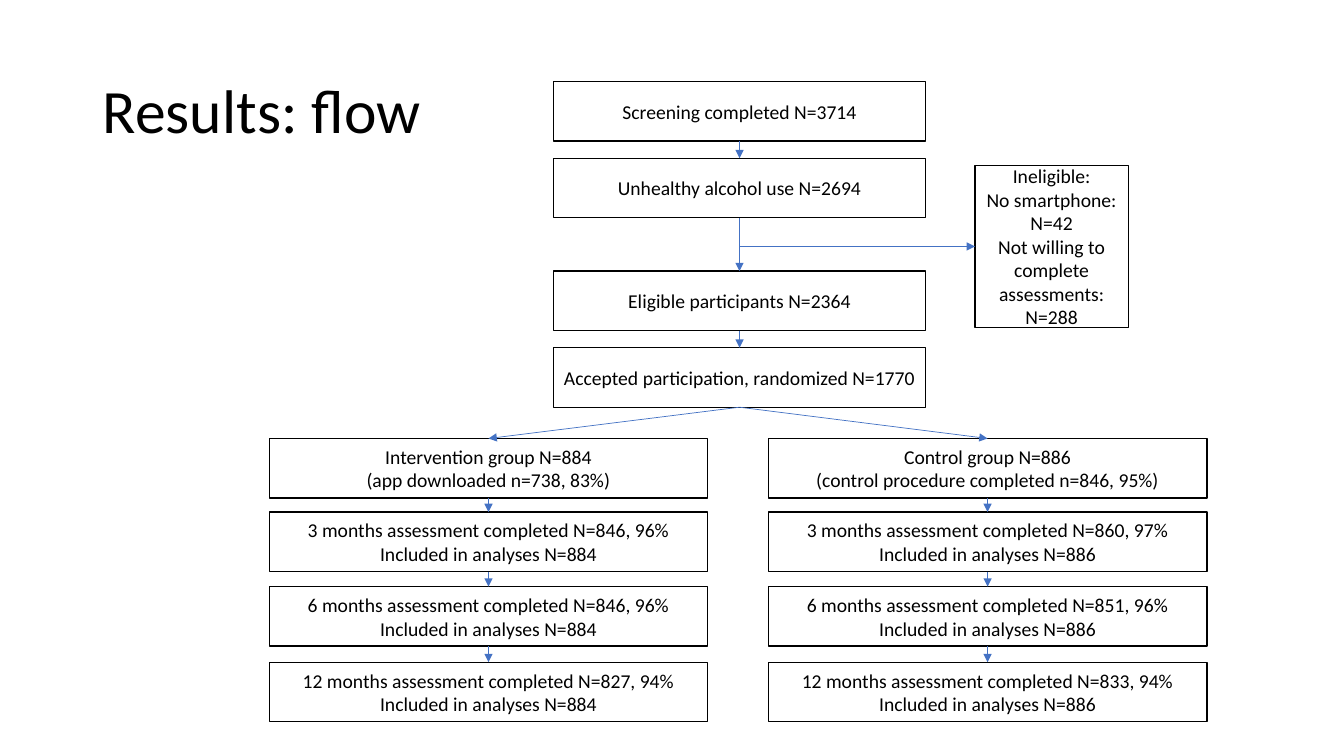
from dataclasses import dataclass
from itertools import pairwise

from lxml.etree import SubElement
from pptx import Presentation
from pptx.dml.color import RGBColor
from pptx.enum.shapes import MSO_CONNECTOR, MSO_SHAPE
from pptx.enum.text import MSO_ANCHOR, MSO_AUTO_SIZE, PP_ALIGN
from pptx.oxml.ns import qn
from pptx.shapes.autoshape import Shape
from pptx.shapes.connector import Connector
from pptx.slide import Slide
from pptx.util import Emu, Pt

EMU_PER_PX = 9144  # 100 px to the inch
FONT = "Calibri"
BLACK = "000000"
ARROW_BLUE = "4472C4"
TOP, LEFT, BOTTOM = 0, 1, 2
STEP_HEIGHT = 59


@dataclass(frozen=True)
class Step:
    top: int
    lines: tuple[str, ...]


@dataclass(frozen=True)
class Column:
    left: int
    width: int
    steps: tuple[Step, ...]


def group_column(left: int, group: str, note: str, included: int,
                 completed: tuple[str, str, str]) -> Column:
    """Describe one trial arm: its group box and three follow-up assessments."""
    follow_ups = tuple(
        Step(top, (f"{months} months assessment completed {count}",
                   f"Included in analyses N={included}"))
        for top, months, count in zip((508, 582, 657), (3, 6, 12), completed)
    )
    return Column(left, 435, (Step(435, (group, note)), *follow_ups))


SCREENING = Column(549, 369, (
    Step(81, ("Screening completed N=3714",)),
    Step(157, ("Unhealthy alcohol use N=2694",)),
    Step(269, ("Eligible participants N=2364",)),
    Step(345, ("Accepted participation, randomized N=1770",)),
))
GROUPS = (
    group_column(267, "Intervention group N=884", "(app downloaded n=738, 83%)",
                 884, ("N=846, 96%", "N=846, 96%", "N=827, 94%")),
    group_column(762, "Control group N=886",
                 "(control procedure completed n=846, 95%)",
                 886, ("N=860, 97%", "N=851, 96%", "N=833, 94%")),
)
INELIGIBLE = ("Ineligible:", "No smartphone: N=42",
              "Not willing to complete assessments: N=288")


def px(length: int) -> Emu:
    return Emu(length * EMU_PER_PX)


def color(hex_code: str) -> RGBColor:
    return RGBColor.from_string(hex_code)


def add_title(page: Slide, text: str) -> None:
    title = page.shapes.title
    title.left, title.top, title.width, title.height = map(px, (92, 40, 1150, 145))
    frame = title.text_frame
    frame.text = text
    frame.auto_size = MSO_AUTO_SIZE.NONE
    frame.vertical_anchor = MSO_ANCHOR.MIDDLE
    para = frame.paragraphs[0]
    para.alignment = PP_ALIGN.LEFT
    para.line_spacing = 0.9
    para.font.name = FONT
    para.font.size = Pt(44)
    para.font.color.rgb = color(BLACK)


def add_box(page: Slide, left: int, top: int, width: int, height: int,
            lines: tuple[str, ...]) -> Shape:
    box = page.shapes.add_shape(MSO_SHAPE.RECTANGLE, px(left), px(top),
                                px(width), px(height))
    box.shadow.inherit = False
    box.fill.background()
    box.line.color.rgb = color(BLACK)
    box.line.width = Pt(1)
    frame = box.text_frame
    frame.word_wrap = True
    frame.vertical_anchor = MSO_ANCHOR.MIDDLE
    frame.text = "\n".join(lines)
    for para in frame.paragraphs:
        para.alignment = PP_ALIGN.CENTER
        para.font.name = FONT
        para.font.size = Pt(14)
        para.font.color.rgb = color(BLACK)
    return box


def add_arrow(page: Slide, x: int = 0, y: int = 0) -> Connector:
    """Add an arrow starting at x, y in EMU; its ends are joined by the caller."""
    arrow = page.shapes.add_connector(MSO_CONNECTOR.STRAIGHT, x, y, x, y)
    arrow.line.color.rgb = color(ARROW_BLUE)
    arrow.line.width = Pt(0.5)
    SubElement(arrow.line._get_or_add_ln(), qn("a:tailEnd"), type="triangle")
    SubElement(arrow._element.spPr, qn("a:effectLst"))
    return arrow


def join_down(page: Slide, upper: Shape, lower: Shape) -> None:
    arrow = add_arrow(page)
    arrow.begin_connect(upper, BOTTOM)
    arrow.end_connect(lower, TOP)


def add_column(page: Slide, column: Column) -> list[Shape]:
    boxes = [add_box(page, column.left, step.top, column.width, STEP_HEIGHT, step.lines)
             for step in column.steps]
    for upper, lower in pairwise(boxes):
        join_down(page, upper, lower)
    return boxes


def main() -> None:
    deck = Presentation()
    deck.slide_width, deck.slide_height = px(1333), px(750)
    page = deck.slides.add_slide(deck.slide_layouts.get_by_name("Title Only"))
    add_title(page, "Results: flow")

    randomized = add_column(page, SCREENING)[-1]
    for group in GROUPS:
        join_down(page, randomized, add_column(page, group)[0])

    ineligible = add_box(page, 967, 164, 152, 161, INELIGIBLE)
    exclusion = add_arrow(page, randomized.left + randomized.width // 2,
                          ineligible.top + ineligible.height // 2)
    exclusion.end_connect(ineligible, LEFT)

    deck.save("out.pptx")


if __name__ == "__main__":
    main()
